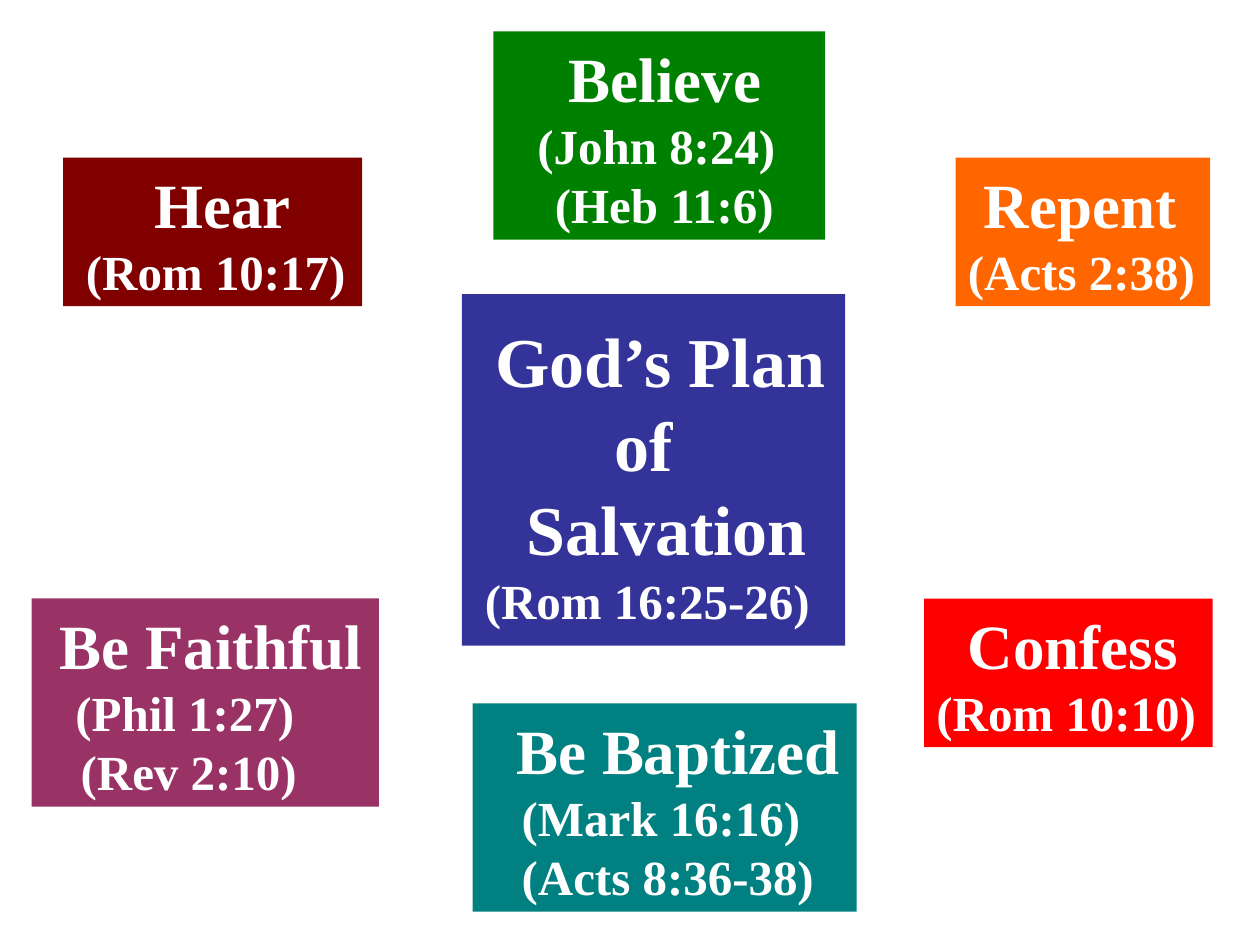
"""Build a slide with the plan of salvation in the middle and its six steps around it."""
from pptx import Presentation
from pptx.dml.color import RGBColor
from pptx.enum import shapes, text
from pptx.util import Pt

WHITE = RGBColor(0xFF, 0xFF, 0xFF)
NAVY = RGBColor(0x33, 0x33, 0x99)
MAROON = RGBColor(0x80, 0x00, 0x00)
GREEN = RGBColor(0x00, 0x80, 0x00)
ORANGE = RGBColor(0xFF, 0x66, 0x00)
RED = RGBColor(0xFF, 0x00, 0x00)
TEAL = RGBColor(0x00, 0x80, 0x80)
PLUM = RGBColor(0x99, 0x33, 0x66)

FONT = "Times New Roman"
PLAN, STEP, VERSE = 40, 36, 28
LINE_HEIGHT = {PLAN: 48, STEP: 44, VERSE: 34}
PLAN_TOP_GAP = 10

topics = [
    (NAVY, (264, 168, 219, 201),
     [("God’s Plan", PLAN, 12), ("of", PLAN, 80), ("Salvation", PLAN, 30), ("(Rom 16:25-26)", VERSE, 6)]),
    (MAROON, (36, 90, 171, 85), [("Hear", STEP, 45), ("(Rom 10:17)", VERSE, 6)]),
    (GREEN, (282, 18, 189.5, 119),
     [("Believe", STEP, 36), ("(John 8:24)", VERSE, 18), ("(Heb 11:6)", VERSE, 28)]),
    (ORANGE, (546, 90, 145.5, 85), [("Repent", STEP, 9), ("(Acts 2:38)", VERSE, 0)]),
    (RED, (528, 342, 165, 85), [("Confess", STEP, 18), ("(Rom 10:10)", VERSE, 0)]),
    (TEAL, (270, 402, 219.5, 119),
     [("Be Baptized", STEP, 18), ("(Mark 16:16)", VERSE, 21), ("(Acts 8:36-38)", VERSE, 21)]),
    (PLUM, (18, 342, 198.5, 119),
     [("Be Faithful", STEP, 9), ("(Phil 1:27)", VERSE, 18), ("(Rev 2:10)", VERSE, 21)]),
]

deck = Presentation()
deck.slide_width, deck.slide_height = Pt(720), Pt(540)
slide = deck.slides.add_slide(deck.slide_layouts[6])

for color, place, lines in topics:
    topic = slide.shapes.add_shape(shapes.MSO_SHAPE.RECTANGLE, *map(Pt, place))
    topic.shadow.inherit = False
    topic.fill.solid()
    topic.fill.fore_color.rgb = color
    topic.line.fill.background()

    frame = topic.text_frame
    frame.word_wrap = True
    frame.vertical_anchor = text.MSO_ANCHOR.TOP
    frame.margin_left, frame.margin_right = Pt(7.2), Pt(0)
    frame.margin_top = frame.margin_bottom = Pt(3.6)

    for number, (wording, size, indent) in enumerate(lines):
        line = frame.add_paragraph() if number else frame.paragraphs[0]
        line.alignment = text.PP_ALIGN.LEFT
        top_gap = PLAN_TOP_GAP if size == PLAN and number == 0 else 0
        line.line_spacing = Pt(LINE_HEIGHT[size] + top_gap)
        line._p.get_or_add_pPr().set("marL", str(Pt(indent)))
        run = line.add_run()
        run.text = wording
        run.font.name = FONT
        run.font.size = Pt(size)
        run.font.bold = True
        run.font.color.rgb = WHITE

deck.save("out.pptx")
